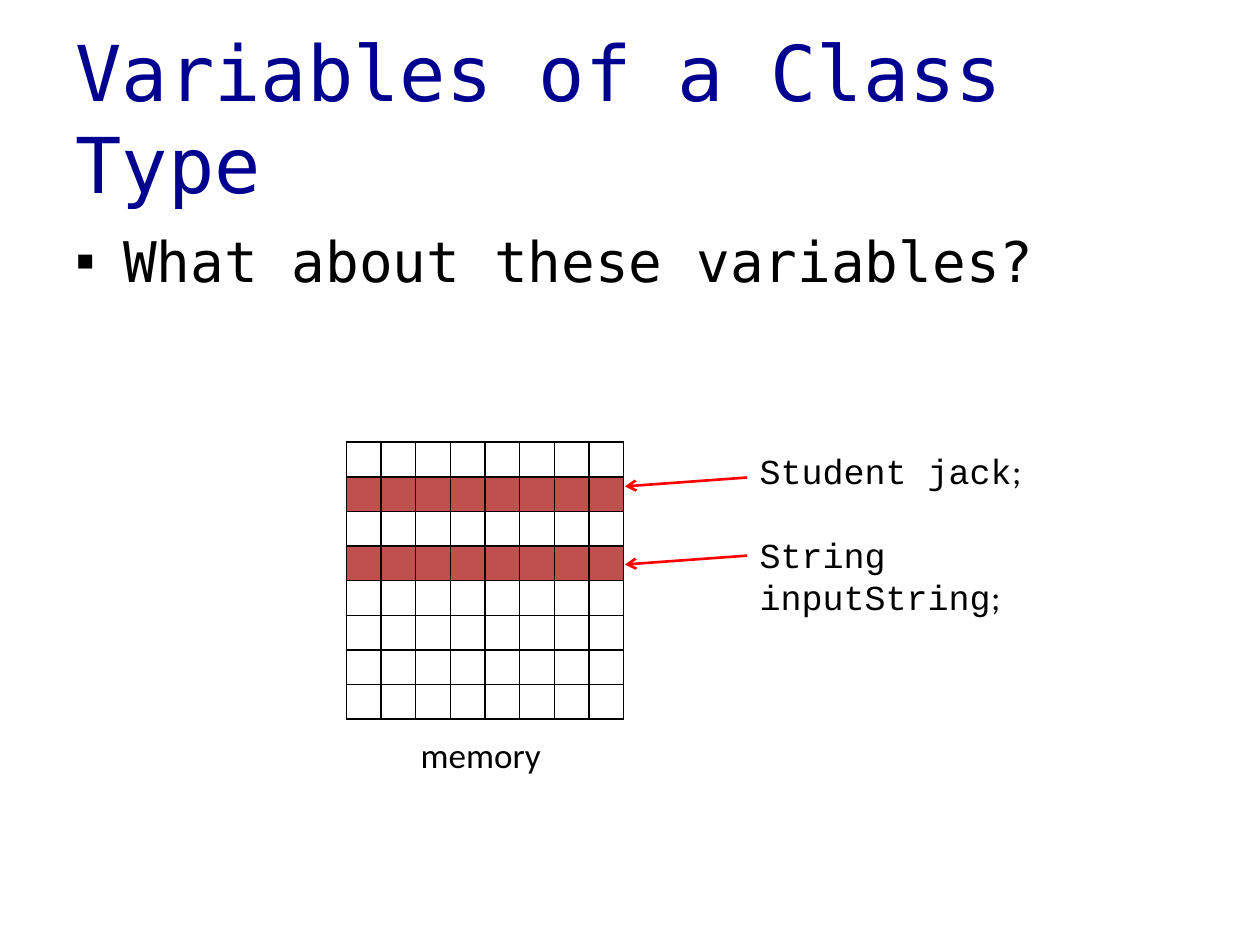
import pptx
import pptx.dml.color
import pptx.enum.shapes
import pptx.enum.text
import pptx.oxml
import pptx.oxml.ns
import pptx.util
from dataclasses import dataclass
from lxml import etree

Inches = pptx.util.Inches
Pt = pptx.util.Pt
qn = pptx.oxml.ns.qn
ANCHOR = pptx.enum.text.MSO_ANCHOR


@dataclass
class Theme:
    title: str = "000090"
    text: str = "000000"
    used: str = "C0504D"
    free: str = "FFFFFF"
    arrow: str = "FF0000"
    mono: str = "DejaVu Sans Mono"
    code: str = "Courier New"
    sans: str = "Calibri"
    head: int = 44
    body: int = 32
    note: int = 20
    cell: int = 8


def rgb(code):
    return pptx.dml.color.RGBColor.from_string(code)


def add(parent, tag, **attrs):
    node = etree.SubElement(parent, qn(tag))
    for key, value in attrs.items():
        node.set(key, str(value))
    return node


class Board:
    def __init__(self, slide, theme):
        self.slide = slide
        self.theme = theme

    def style(self, run, font, size, color):
        run.font.name = font
        run.font.size = Pt(size)
        run.font.color.rgb = rgb(color)

    def text(self, box, lines, size, color=None, anchor=ANCHOR.TOP, gap=0):
        """Each line is a list of (words, font) pairs."""
        shape = self.slide.shapes.add_textbox(*map(Inches, box))
        frame = shape.text_frame
        frame.word_wrap = True
        frame.vertical_anchor = anchor
        for i, parts in enumerate(lines):
            para = frame.add_paragraph() if i else frame.paragraphs[0]
            para.space_before = Pt(gap if i else 0)
            for words, font in parts:
                run = para.add_run()
                run.text = words
                self.style(run, font, size, color or self.theme.text)
        return frame

    def bullet(self, para, mark, indent):
        props = para._p.get_or_add_pPr()
        props.set("marL", str(Inches(indent)))
        props.set("indent", str(-Inches(indent)))
        add(props, "a:buFont", typeface="Arial")
        add(props, "a:buChar", char=mark)

    def edge(self, cell):
        props = cell._tc.get_or_add_tcPr()
        for i, side in enumerate(("lnL", "lnR", "lnT", "lnB")):
            line = pptx.oxml.parse_xml(
                f'<a:{side} xmlns:a="http://schemas.openxmlformats.org/'
                f'drawingml/2006/main" w="{Pt(1)}"><a:solidFill><a:srgbClr '
                f'val="{self.theme.text}"/></a:solidFill></a:{side}>')
            props.insert(i, line)

    def grid(self, left, top, side, count, used):
        size = Inches(side)
        frame = self.slide.shapes.add_table(
            count, count, Inches(left), Inches(top), size, size)
        table = frame.table
        table.first_row = table.horz_banding = False
        for col in table.columns:
            col.width = size // count
        for r, row in enumerate(table.rows):
            row.height = size // count
            for cell in row.cells:
                cell.margin_left = cell.margin_right = 0
                cell.margin_top = cell.margin_bottom = 0
                cell.fill.solid()
                cell.fill.fore_color.rgb = rgb(
                    self.theme.used if r in used else self.theme.free)
                # Small type keeps the empty rows from growing
                add(cell.text_frame.paragraphs[0]._p, "a:endParaRPr",
                    sz=self.theme.cell * 100)
                self.edge(cell)

    def arrow(self, start, end):
        kind = pptx.enum.shapes.MSO_CONNECTOR.STRAIGHT
        line = self.slide.shapes.add_connector(
            kind, *map(Inches, start + end))
        line.line.color.rgb = rgb(self.theme.arrow)
        line.line.width = Pt(1.5)
        add(line.line._get_or_add_ln(), "a:tailEnd", type="arrow")
        add(line._element.spPr, "a:effectLst")


def main():
    deck = pptx.Presentation()
    deck.slide_width, deck.slide_height = Inches(10), Inches(7.5)
    theme = Theme()
    board = Board(deck.slides.add_slide(deck.slide_layouts[6]), theme)

    # Heading and question
    board.text((0.5, 0.3, 9, 1.25),
               [[("Variables of a Class Type", theme.mono)]],
               theme.head, theme.title, ANCHOR.MIDDLE)
    body = board.text((0.5, 1.75, 9, 4.95),
                      [[("What about these variables?", theme.mono)]],
                      theme.body)
    board.bullet(body.paragraphs[0], "▪", 0.38)

    # Declarations, one blank line's height apart
    names = ("Student jack", "String inputString")
    board.text((5.93, 3.52, 3.13, 1.11),
               [[(name, theme.code), (";", theme.sans)] for name in names],
               theme.note, gap=24)

    # Memory cells with two rows in use
    board.text((3.24, 5.77, 1.25, 0.44), [[("memory", theme.sans)]],
               theme.note)
    board.grid(2.75, 3.51, 2.2, 8, used=(1, 3))

    # Arrows from declarations to their rows
    for top in (4.41, 3.79):
        board.arrow((5.93, top), (4.96, top + 0.07))

    deck.save("out.pptx")


if __name__ == "__main__":
    main()
